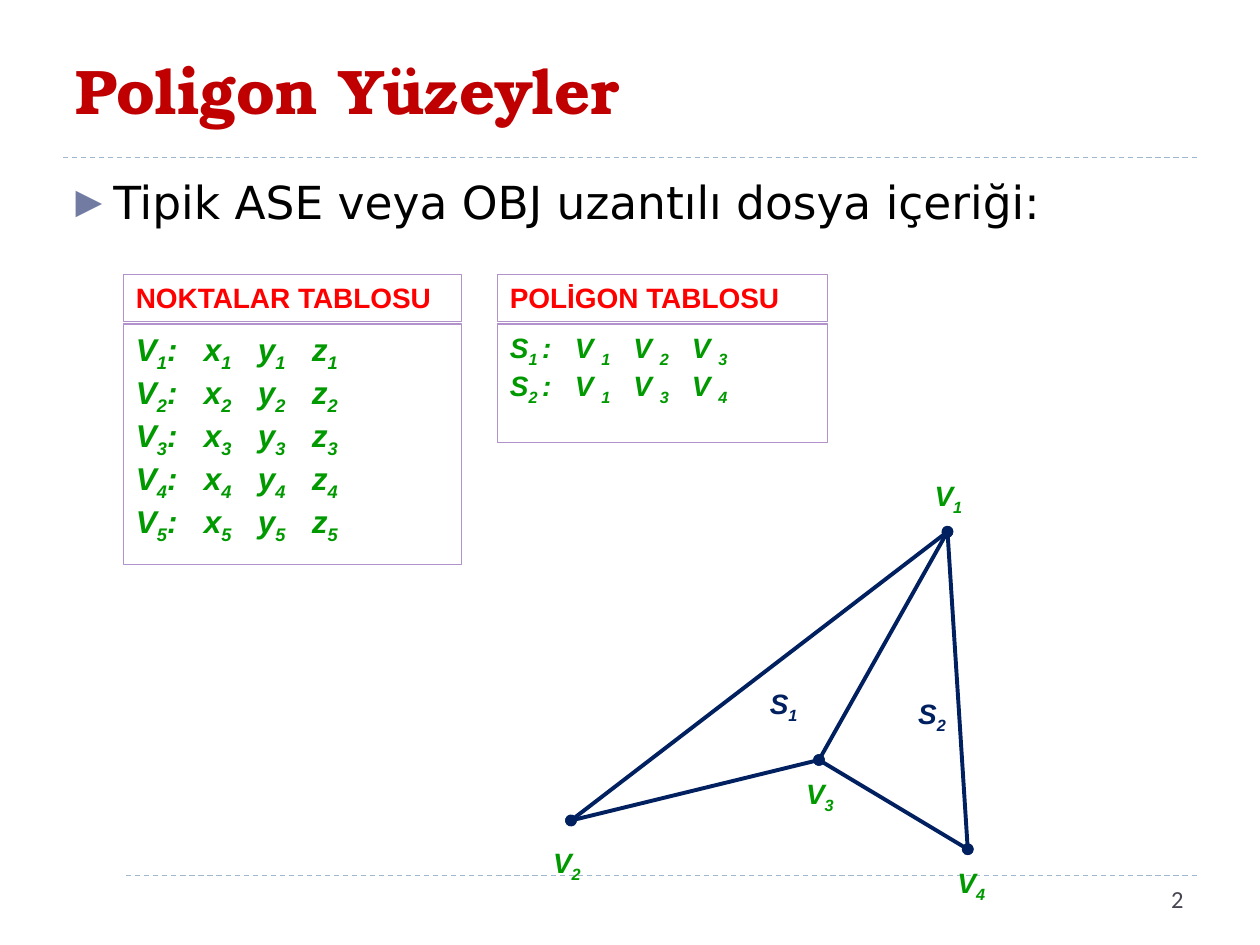
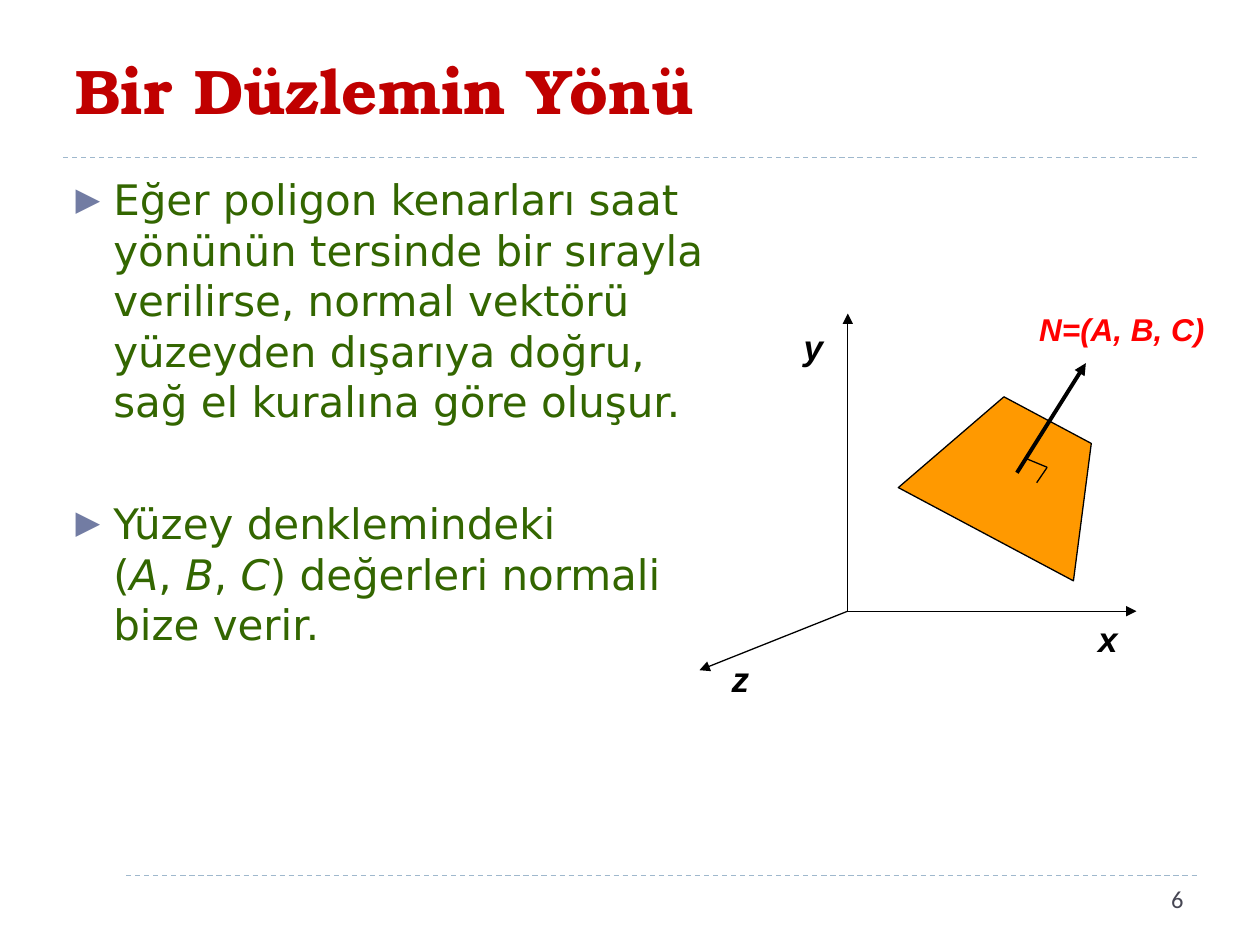
from lxml import etree
from pptx import Presentation
from pptx.dml import color as dml_color
from pptx.enum import dml, shapes, text
from pptx.oxml import ns
from pptx.util import Cm, Pt

COLOURS = {
    "title": "C00000", "rule": "9FB8CD", "bullet": "727CA3", "paper": "FFFFFF",
    "ink": "000000", "number": "464653", "frame": "B292CA", "red": "FF0000",
    "vertex": "009900", "mesh": "002060", "list": "336600", "polygon": "FF9900",
}
LABEL = {"name": "Arial", "bold": True, "italic": True}
HEADING = {"name": "Arial", "bold": True, "size": Pt(16)}
TITLE = {"name": "TeX Gyre Bonum", "bold": True, "size": Pt(36)}
NUMBER = {"name": "Calibri", "size": Pt(14)}
TOP_LEFT = {"word_wrap": True, "vertical_anchor": text.MSO_ANCHOR.TOP}
SUBSCRIPT, ITALIC = ("baseline", "-25000"), ("i", "1")


def rgb(name):
    return dml_color.RGBColor.from_string(COLOURS[name])


def apply(target, values):
    for key, value in values.items():
        setattr(target, key, value)


def add_xml(parent, tag, **values):
    return etree.SubElement(parent, ns.qn(tag), values)


def write(para, marked, style, colour, mark=SUBSCRIPT):
    """Text between tildes takes the mark."""
    for index, part in enumerate(marked.split("~")):
        if part:
            span = para.add_run()
            span.text = part
            apply(span.font, style)
            span.font.color.rgb = rgb(colour)
            if index % 2:
                span._r.get_or_add_rPr().set(*mark)


def place(shape, box):
    apply(shape, dict(zip(("left", "top", "width", "height"), map(Cm, box))))


def add_line(page, start, end, colour, width=0.75, head=None, tail=None, dash=None):
    line = page.shapes.add_connector(shapes.MSO_CONNECTOR.STRAIGHT, *map(Cm, start + end))
    line.line.width = Pt(width)
    line.line.color.rgb = rgb(colour)
    if dash:
        line.line.dash_style = dash
    properties = line._element.spPr
    outline = properties.find(ns.qn("a:ln"))
    for tag, kind in (("a:headEnd", head), ("a:tailEnd", tail)):
        if kind:
            add_xml(outline, tag, type=kind)
    add_xml(properties, "a:effectLst")


def add_rectangle(page, box, fill=None, line=None):
    rectangle = page.shapes.add_shape(shapes.MSO_SHAPE.RECTANGLE, *map(Cm, box))
    rectangle.shadow.inherit = False
    if fill:
        rectangle.fill.solid()
        rectangle.fill.fore_color.rgb = rgb(fill)
    else:
        rectangle.fill.background()
    if line:
        rectangle.line.color.rgb = rgb(line)
        rectangle.line.width = Pt(0.75)
    else:
        rectangle.line.fill.background()
    apply(rectangle.text_frame, TOP_LEFT)
    return rectangle


def add_label(page, box, marked, size, colour):
    label = page.shapes.add_textbox(*map(Cm, box))
    apply(label.text_frame, TOP_LEFT)
    write(label.text_frame.paragraphs[0], marked, {**LABEL, "size": Pt(size)}, colour)


def add_base(deck, title, number):
    page = deck.slides.add_slide(deck.slide_layouts[1])
    for height in (17.65, 3.18):
        add_line(page, (1.27, height), (24.13, height), "rule", dash=dml.MSO_LINE.DASH)
    add_rectangle(page, (0.89, 17.32, 1.6, 1.6), fill="paper")

    heading = page.shapes.title
    place(heading, (1.27, 0.43, 22.86, 2.74))
    heading.text_frame.vertical_anchor = text.MSO_ANCHOR.MIDDLE
    para = heading.text_frame.paragraphs[0]
    para.alignment = text.PP_ALIGN.LEFT
    write(para, title, TITLE, "title")

    corner = add_rectangle(page, (20.5, 17.7, 3.61, 1.02), fill="paper")
    para = corner.text_frame.paragraphs[0]
    para.alignment = text.PP_ALIGN.RIGHT
    write(para, number, NUMBER, "number")
    return page


def fill_body(page, box, items, size, colour, gap=6):
    body = page.placeholders[1]
    place(body, box)
    frame = body.text_frame
    frame.auto_size = text.MSO_AUTO_SIZE.NONE
    style = {"name": "DejaVu Sans", "size": Pt(size)}
    for index, item in enumerate(items):
        para = frame.add_paragraph() if index else frame.paragraphs[0]
        para.space_before = Pt(gap if index else 6)
        properties = para._p.get_or_add_pPr()
        apply_indent = {"marL": str(Cm(0.76)), "indent": str(-Cm(0.76))}
        for key, value in apply_indent.items():
            properties.set(key, value)
        tint = add_xml(properties, "a:buClr")
        add_xml(tint, "a:srgbClr", val=COLOURS["bullet"])
        add_xml(properties, "a:buSzPct", val="76000")
        add_xml(properties, "a:buFont", typeface="DejaVu Sans")
        add_xml(properties, "a:buChar", char="▶")
        for row, line in enumerate(item.split("\n")):
            if row:
                para.add_line_break()
            write(para, line, style, colour, ITALIC)


def add_listing(page, box, heading, rows, size, first_tab, tab_step):
    left, top, width, height = box
    header = add_rectangle(page, (left, top, width, 0.94), line="frame")
    para = header.text_frame.paragraphs[0]
    para.alignment = text.PP_ALIGN.LEFT
    write(para, heading, HEADING, "red")

    content = add_rectangle(page, (left, top + 0.99, width, height - 0.99), line="frame")
    for index, row in enumerate(rows):
        frame = content.text_frame
        para = frame.add_paragraph() if index else frame.paragraphs[0]
        para.alignment = text.PP_ALIGN.LEFT
        stops = add_xml(para._p.get_or_add_pPr(), "a:tabLst")
        for column in range(3):
            position = Cm(first_tab + column * tab_step)
            add_xml(stops, "a:tab", pos=str(position), algn="l")
        write(para, row, {**LABEL, "size": Pt(size)}, "vertex")


def offset(origin, point):
    return tuple(base + step for base, step in zip(origin, point))


def add_mesh(page, origin):
    vertices = {1: (8.2, 1.19), 2: (0.61, 7.01), 3: (5.61, 5.79), 4: (8.61, 7.59)}
    edges = [(2, 1, "oval"), (2, 3, "oval"), (3, 4, "oval"), (1, 4, "oval"), (3, 1, None)]
    for start, end, dot in edges:
        add_line(page, offset(origin, vertices[start]), offset(origin, vertices[end]),
                 "mesh", 2.25, head=dot, tail=dot)
    labels = [
        ("S~1~", (4.37, 4.19), "mesh"), ("S~2~", (7.36, 4.39), "mesh"),
        ("V~2~", (0, 7.39), "vertex"), ("V~1~", (7.69, 0), "vertex"),
        ("V~3~", (5.1, 5.99), "vertex"), ("V~4~", (8.15, 7.79), "vertex"),
    ]
    for marked, point, colour in labels:
        add_label(page, offset(origin, point) + (2.01, 0.94), marked, 16, colour)


def add_normal_figure(page, origin):
    centre = offset(origin, (2.99, 6.2))
    for tip in ((2.99, 0.2), (8.81, 6.2), (0, 7.39)):
        add_line(page, centre, offset(origin, tip), "ink", tail="triangle")

    corners = [(7.54, 5.59), (7.9, 2.82), (6.14, 1.88), (4.01, 3.71)]
    points = [tuple(map(Cm, offset(origin, corner))) for corner in corners]
    builder = page.shapes.build_freeform(*points[0])
    builder.add_line_segments(points[1:], close=True)
    polygon = builder.convert_to_shape()
    polygon.shadow.inherit = False
    polygon.fill.solid()
    polygon.fill.fore_color.rgb = rgb("polygon")
    polygon.line.color.rgb = rgb("ink")
    polygon.line.width = Pt(0.75)

    add_line(page, offset(origin, (6.4, 3.41)), offset(origin, (7.79, 1.2)),
             "ink", 2.25, tail="triangle")
    elbow = offset(origin, (7.01, 3.3))
    for end in ((6.6, 3.13), (6.8, 3.61)):
        add_line(page, elbow, offset(origin, end), "ink")

    add_label(page, offset(origin, (6.6, 0)) + (4.19, 1.02), "N=(A, B, C)", 18, "red")
    for name, point in (("x", (7.79, 6.2)), ("y", (1.85, 0.31)), ("z", (0.4, 7.01))):
        add_label(page, offset(origin, point) + (2.01, 1.09), name, 20, "ink")


def build_surfaces(deck):
    page = add_base(deck, "Poligon Yüzeyler", "2")
    fill_body(page, (1.27, 3.38, 22.86, 13.72),
              ["Tipik ASE veya OBJ uzantılı dosya içeriği:"], 26, "ink")
    points = [f"V~{n}~:\tx~{n}~\ty~{n}~\tz~{n}~" for n in range(1, 6)]
    add_listing(page, (2.49, 5.54, 6.81, 5.84), "NOKTALAR TABLOSU", points, 18, 1.37, 1.09)
    triangles = {1: (1, 2, 3), 2: (1, 3, 4)}
    polygons = [f"S~{n} ~:" + "".join(f"\tV ~{v}~" for v in corners)
                for n, corners in triangles.items()]
    add_listing(page, (10.03, 5.54, 6.65, 3.38), "POLİGON TABLOSU", polygons, 16, 1.31, 1.18)
    add_mesh(page, (10.9, 9.53))


def build_orientation(deck):
    page = add_base(deck, "Bir Düzlemin Yönü", "6")
    items = [
        "Eğer poligon kenarları saat yönünün tersinde bir sırayla verilirse, "
        "normal vektörü yüzeyden dışarıya doğru, sağ el kuralına göre oluşur.",
        "Yüzey denklemindeki\n(~A~, ~B~, ~C~) değerleri normali bize verir.",
    ]
    fill_body(page, (1.27, 3.38, 13.44, 13.72), items, 24, "list", gap=41)
    add_normal_figure(page, (14.1, 6.12))


def main():
    deck = Presentation()
    apply(deck, {"slide_width": Cm(25.4), "slide_height": Cm(19.05)})
    build_surfaces(deck)
    build_orientation(deck)
    deck.save("out.pptx")


if __name__ == "__main__":
    main()
